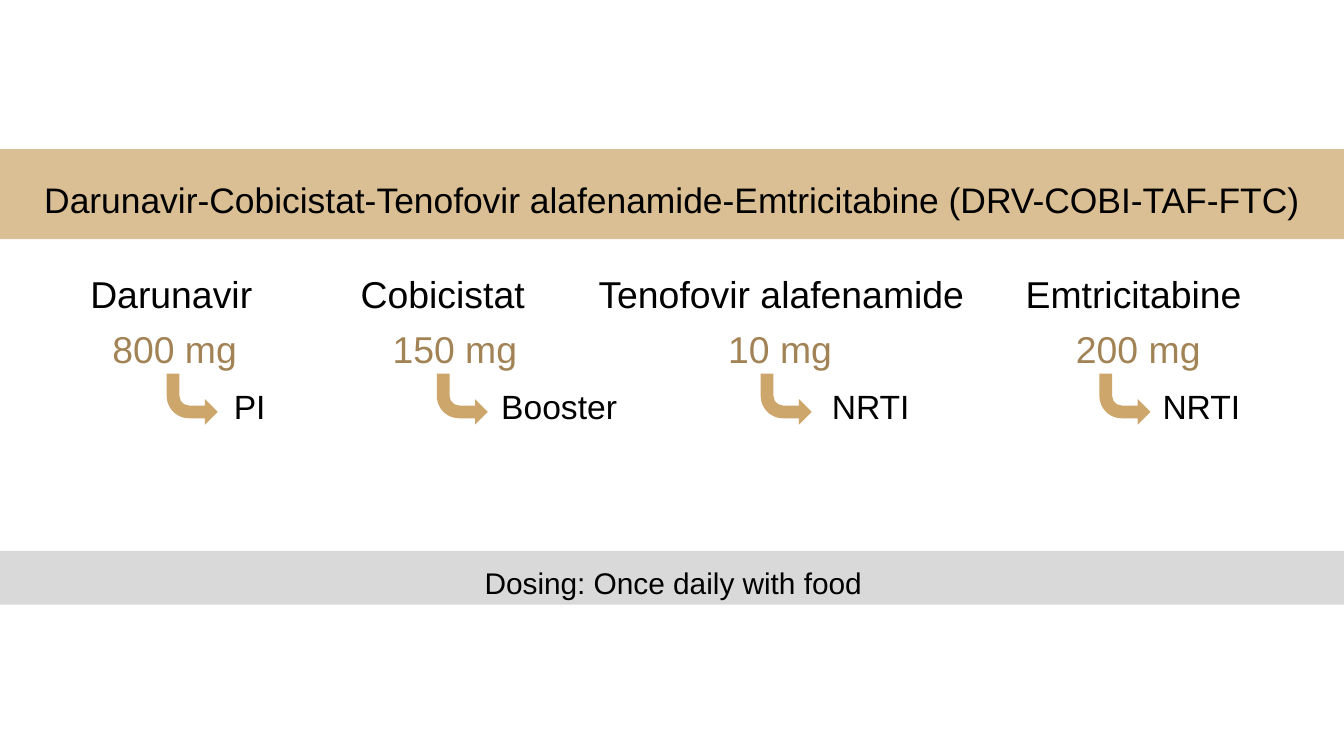
from pptx import Presentation
from pptx.dml.color import RGBColor
from pptx.enum.shapes import MSO_SHAPE
from pptx.enum.text import MSO_ANCHOR, PP_ALIGN
from pptx.oxml.ns import qn
from pptx.util import Inches, Pt
from lxml import etree

RECT, ROUNDED, BENT = MSO_SHAPE.RECTANGLE, MSO_SHAPE.ROUNDED_RECTANGLE, MSO_SHAPE.BENT_ARROW
MIDDLE = MSO_ANCHOR.MIDDLE
LEFT, CENTER = PP_ALIGN.LEFT, PP_ALIGN.CENTER

# Content: each part is (text, left, width); the arrow needs only its left edge
TITLE = ("Darunavir-Cobicistat-Tenofovir alafenamide-Emtricitabine (DRV-COBI-TAF-FTC)",
         -0.05, 10.1)
DOSING = ("Dosing: Once daily with food", 0, 10.02)
DRUGS = [
    {"name": ("Darunavir", 0.14, 2.27), "dose": ("800 mg", 0.68, 1.24),
     "arrow": 1.24, "role": ("PI", 1.63, 1)},
    {"name": ("Cobicistat", 2.16, 2.27), "dose": ("150 mg", 2.66, 1.45),
     "arrow": 3.25, "role": ("Booster", 3.62, 1.36)},
    {"name": ("Tenofovir alafenamide", 4.33, 2.97), "dose": ("10 mg", 5.27, 1.07),
     "arrow": 5.66, "role": ("NRTI", 6.08, 1)},
    {"name": ("Emtricitabine", 7.49, 1.89), "dose": ("200 mg", 7.77, 1.4),
     "arrow": 8.18, "role": ("NRTI", 8.54, 1)},
]

# Theme and rows (top, height)
WIDTH = 10
HEIGHT = WIDTH * 9 / 16
THEME = {
    "font": "Arial", "text": "000000", "dose": "A28355",
    "gold": "CDA66B", "grey": "D9D9D9", "banner_alpha": 72,
    "title_size": 19, "name_size": 20, "role_size": 18, "note_size": 16,
}
ROWS = {"banner": (1.11, 0.67), "name": (1.96, 0.5), "dose": (2.43, 0.33),
        "arrow": (2.78, 0.38), "role": (2.9, 0.24), "footer": (4.1, 0.4)}

deck = Presentation()
deck.slide_width, deck.slide_height = Inches(WIDTH), Inches(HEIGHT)
slide = deck.slides.add_slide(deck.slide_layouts[6])


def place(row, left, width):
    top, height = ROWS[row]
    return [Inches(length) for length in (left, top, width, height)]


def add_shape(kind, row, left, width, fill=None):
    shape = slide.shapes.add_shape(kind, *place(row, left, width))
    shape.shadow.inherit = False
    shape.line.fill.background()
    if fill:
        shape.fill.solid()
        shape.fill.fore_color.rgb = RGBColor.from_string(fill)
    else:
        shape.fill.background()
    return shape


def write(box, text, size, color=THEME["text"], align=CENTER, spacing=None):
    frame = box.text_frame
    frame.word_wrap = True
    frame.vertical_anchor = MIDDLE
    para = frame.paragraphs[0]
    para.alignment = align
    if spacing:
        para.line_spacing = Pt(spacing)
    span = para.add_run()
    span.text = text
    span.font.name = THEME["font"]
    span.font.size = Pt(size)
    span.font.color.rgb = RGBColor.from_string(color)


# Title banner and dosing strip
text, left, width = TITLE
banner = add_shape(RECT, "banner", left, width, THEME["gold"])
tint = banner.element.spPr.find(qn("a:solidFill"))[0]
etree.SubElement(tint, qn("a:alpha")).set("val", str(THEME["banner_alpha"] * 1000))
write(banner, text, THEME["title_size"], spacing=28)

text, left, width = DOSING
footer = add_shape(RECT, "footer", left, width, THEME["grey"])
write(footer, text, THEME["note_size"], spacing=24)

# One column per drug: name, dose, arrow, role
for drug in DRUGS:
    text, left, width = drug["name"]
    name_box = slide.shapes.add_textbox(*place("name", left, width))
    write(name_box, text, THEME["name_size"], spacing=20)

    text, left, width = drug["dose"]
    write(add_shape(ROUNDED, "dose", left, width), text, THEME["name_size"], THEME["dose"])

    arrow = add_shape(BENT, "arrow", drug["arrow"], ROWS["arrow"][1], THEME["gold"])
    arrow.element.spPr.find(qn("a:xfrm")).set("flipV", "1")

    text, left, width = drug["role"]
    write(add_shape(ROUNDED, "role", left, width), text, THEME["role_size"], align=LEFT)

deck.save("out.pptx")
